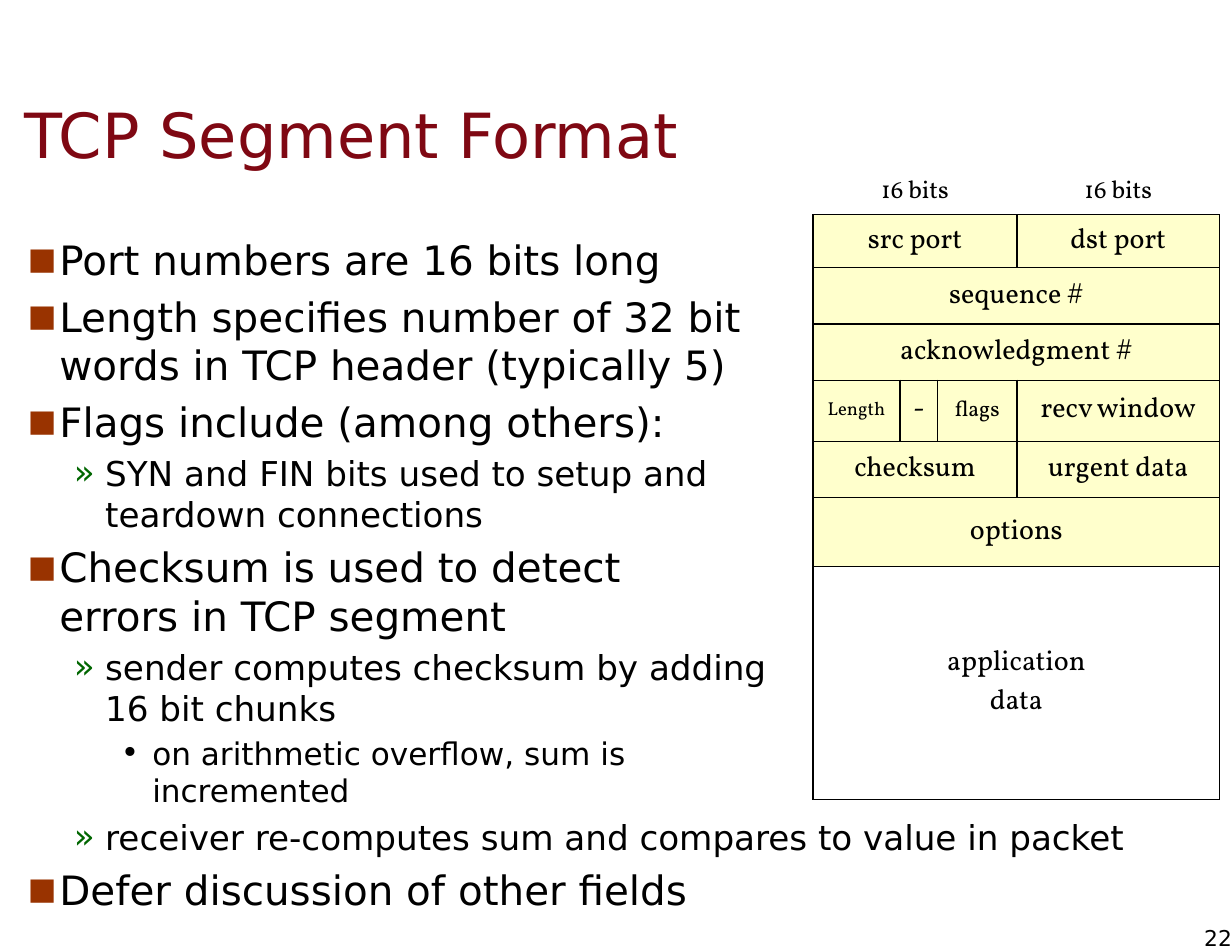
from lxml import etree
from pptx import Presentation
from pptx import util as u
from pptx.dml.color import RGBColor
from pptx.enum import text
from pptx.oxml import ns

WIDTH, HEIGHT = u.Inches(11), u.Inches(8.5)
MAROON = RGBColor(0x7F, 0x08, 0x13)
BLACK = RGBColor(0, 0, 0)
WHITE = RGBColor(0xFF, 0xFF, 0xFF)
CREAM = RGBColor(0xFF, 0xFF, 0xCC)
RUST = RGBColor(0x99, 0x33, 0x00)
GREEN = RGBColor(0x00, 0x66, 0x00)
SANS, SERIF = "DejaVu Sans", "Vollkorn"

LEVELS = [
    ("■", RUST, 75, 0.42, 26),
    ("»", GREEN, 100, 0.83, 22),
    ("•", BLACK, 100, 1.25, 20),
]
HANG = 0.28
POINTS = [
    (0, "Port numbers are 16 bits long"),
    (0, "Length specifies number of 32 bit \vwords in TCP header (typically 5)"),
    (0, "Flags include (among others):"),
    (1, "SYN and FIN bits used to setup and \vteardown connections"),
    (0, "Checksum is used to detect \verrors in TCP segment"),
    (1, "sender computes checksum by adding\v16 bit chunks"),
    (2, "on arithmetic overflow, sum is \vincremented"),
    (1, "receiver re-computes sum and compares to value in packet"),
    (0, "Defer discussion of other fields"),
]

COLUMN_SHARES = [0.78, 0.34, 0.71, 1.82]
SEGMENT = [
    (0.47, [("16 bits", 3, 16), ("16 bits", 1, 16)]),
    (0.47, [("src port", 3, 18), ("dst port", 1, 18)]),
    (0.5, [("sequence #", 4, 18)]),
    (0.5, [("acknowledgment #", 4, 18)]),
    (0.54, [("Length", 1, 12), ("-", 1, 18), ("flags", 1, 14), ("recv window", 1, 18)]),
    (0.5, [("checksum", 3, 18), ("urgent data", 1, 18)]),
    (0.61, [("options", 4, 18)]),
    (2.07, [("application\vdata", 4, 18)]),
]


def area(left, top, width, height):
    return [round(share * side) for share, side in
            zip((left, top, width, height), (WIDTH, HEIGHT) * 2)]


def style(paragraph, size, family, color):
    paragraph.font.size = u.Pt(size)
    paragraph.font.name = family
    paragraph.font.color.rgb = color


def set_margins(frame, side, end):
    frame.margin_left = frame.margin_right = u.Inches(side)
    frame.margin_top = frame.margin_bottom = u.Inches(end)


def add_bullet(paragraph, level):
    mark, color, percent, indent, _ = LEVELS[level]
    props = paragraph._p.get_or_add_pPr()
    props.set("marL", str(u.Inches(indent)))
    props.set("indent", str(-u.Inches(HANG)))
    tint = etree.SubElement(props, ns.qn("a:buClr"))
    etree.SubElement(tint, ns.qn("a:srgbClr"), val=str(color))
    etree.SubElement(props, ns.qn("a:buSzPct"), val=str(percent * 1000))
    etree.SubElement(props, ns.qn("a:buFont"), typeface=SANS)
    etree.SubElement(props, ns.qn("a:buChar"), char=mark)


def place_title(slide, box):
    title = slide.shapes.title
    title.left, title.top, title.width, title.height = box
    frame = title.text_frame
    set_margins(frame, 0.11, 0.06)
    frame.vertical_anchor = text.MSO_ANCHOR.MIDDLE
    heading = frame.paragraphs[0]
    heading.text = "TCP Segment Format"
    heading.alignment = text.PP_ALIGN.LEFT
    style(heading, 40, SANS, MAROON)


def place_points(slide, box):
    frame = slide.shapes.add_textbox(*box).text_frame
    frame.word_wrap = True
    set_margins(frame, 0.11, 0.06)
    for number, (level, wording) in enumerate(POINTS):
        point = frame.add_paragraph() if number else frame.paragraphs[0]
        size = LEVELS[level][-1]
        point.text = wording
        point.level = level
        add_bullet(point, level)
        if number:
            point.space_before = u.Pt(0.2 * size)
        style(point, size, SANS, BLACK)


def set_borders(cell, drawn):
    props = cell._tc.get_or_add_tcPr()
    for edge in ("lnL", "lnR", "lnT", "lnB"):
        line = etree.SubElement(props, ns.qn("a:" + edge), w=str(u.Pt(1)))
        if edge in drawn:
            paint = etree.SubElement(line, ns.qn("a:solidFill"))
            etree.SubElement(paint, ns.qn("a:srgbClr"), val=str(BLACK))
        else:
            etree.SubElement(line, ns.qn("a:noFill"))


def place_segment(slide, box):
    table = slide.shapes.add_table(len(SEGMENT), len(COLUMN_SHARES), *box).table
    table.first_row = table.horz_banding = False
    for column, share in zip(table.columns, COLUMN_SHARES):
        column.width = round(box[2] * share / sum(COLUMN_SHARES))
    total = sum(height for height, _ in SEGMENT)
    for row, (height, fields) in enumerate(SEGMENT):
        header, payload = row == 0, row == len(SEGMENT) - 1
        table.rows[row].height = round(box[3] * height / total)
        for cell in table.rows[row].cells:
            set_borders(cell, ("lnB",) if header else ("lnL", "lnR", "lnT", "lnB"))
            if header:
                cell.fill.background()
            else:
                cell.fill.solid()
                cell.fill.fore_color.rgb = WHITE if payload else CREAM
        start = 0
        for wording, span, size in fields:
            field = table.cell(row, start)
            if span > 1:
                field.merge(table.cell(row, start + span - 1))
            anchors = text.MSO_ANCHOR
            field.vertical_anchor = anchors.BOTTOM if header else anchors.MIDDLE
            label = field.text_frame.paragraphs[0]
            label.text = wording
            label.alignment = text.PP_ALIGN.CENTER
            style(label, size, SERIF, BLACK)
            start += span


def place_page_number(slide, box):
    frame = slide.shapes.add_textbox(*box).text_frame
    set_margins(frame, 0, 0)
    frame.vertical_anchor = text.MSO_ANCHOR.MIDDLE
    number = frame.paragraphs[0]
    number.text = "22"
    number.alignment = text.PP_ALIGN.RIGHT
    style(number, 14, SANS, BLACK)


def main():
    deck = Presentation()
    deck.slide_width, deck.slide_height = WIDTH, HEIGHT
    slide = deck.slides.add_slide(deck.slide_layouts[5])
    place_title(slide, area(0.01, 0.08, 0.96, 0.12))
    place_points(slide, area(0, 0.24, 1, 0.76))
    place_segment(slide, area(0.66, 0.17, 0.33, 0.67))
    place_page_number(slide, area(0.97, 0.97, 0.03, 0.03))
    deck.save("out.pptx")


if __name__ == "__main__":
    main()
